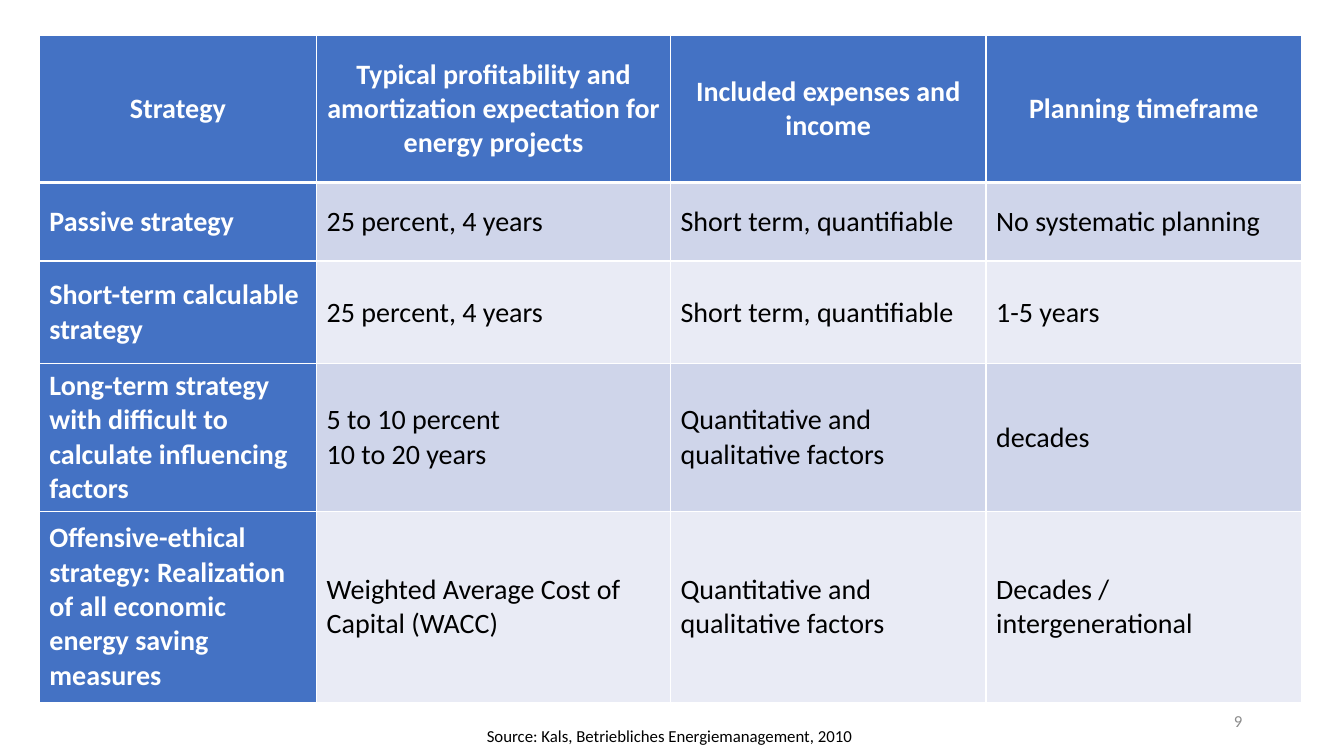
from dataclasses import dataclass

from lxml.etree import SubElement
from pptx import Presentation
from pptx.dml.color import RGBColor
from pptx.enum.text import MSO_ANCHOR, PP_ALIGN
from pptx.oxml.ns import qn
from pptx.util import Inches, Pt


@dataclass(frozen=True)
class Theme:
    font: str = "Calibri"
    head: str = "4472C4"
    bands: tuple = ("CFD5EA", "E9EBF5")
    light: str = "FFFFFF"
    dark: str = "000000"
    muted: str = "8C8C8C"
    cell: int = 20
    small: int = 12
    thin: int = 1
    thick: int = 3


HEADS = ["Strategy",
         "Typical profitability and amortization expectation for energy projects",
         "Included expenses and income",
         "Planning timeframe"]
PLANS = [
    ["Passive strategy", "25 percent, 4 years",
     "Short term, quantifiable", "No systematic planning"],
    ["Short-term calculable strategy", "25 percent, 4 years",
     "Short term, quantifiable", "1-5 years"],
    ["Long-term strategy with difficult to calculate influencing factors",
     "5 to 10 percent\n10 to 20 years",
     "Quantitative and qualitative factors", "decades"],
    ["Offensive-ethical strategy: Realization of all economic energy saving measures",
     "Weighted Average Cost of Capital (WACC)",
     "Quantitative and qualitative factors", "Decades / intergenerational"],
]
WIDTHS = [2.75, 3.51, 3.13, 3.13]
HEIGHTS = [1.46, 0.78, 1.02, 1.46, 1.9]


class Board:
    def __init__(self, slide, theme):
        self.slide = slide
        self.theme = theme

    def style(self, frame, size, color, bold=False, align=PP_ALIGN.LEFT):
        for para in frame.paragraphs:
            para.alignment = align
            for run in para.runs:
                run.font.name = self.theme.font
                run.font.size = Pt(size)
                run.font.bold = bold
                run.font.color.rgb = RGBColor.from_string(color)

    def edges(self, cell, row):
        """Draw the cell borders, thick between the header and the body."""
        props = cell._tc.get_or_add_tcPr()
        for side in "LRTB":
            bold = (row, side) in ((0, "B"), (1, "T"))
            width = self.theme.thick if bold else self.theme.thin
            line = SubElement(props, qn(f"a:ln{side}"), w=str(Pt(width)))
            fill = SubElement(line, qn("a:solidFill"))
            SubElement(fill, qn("a:srgbClr"), val=self.theme.light)

    def table(self, left, top, rows, widths, heights):
        theme = self.theme
        grid = self.slide.shapes.add_table(
            len(rows), len(widths), Inches(left), Inches(top),
            Inches(sum(widths)), Inches(sum(heights))).table
        grid.first_col = True
        for col, width in zip(grid.columns, widths):
            col.width = Inches(width)
        for i, (texts, height) in enumerate(zip(rows, heights)):
            grid.rows[i].height = Inches(height)
            for j, text in enumerate(texts):
                cell = grid.cell(i, j)
                label = i == 0 or j == 0
                color = theme.head if label else theme.bands[(i - 1) % 2]
                self.edges(cell, i)
                cell.fill.solid()
                cell.fill.fore_color.rgb = RGBColor.from_string(color)
                cell.vertical_anchor = MSO_ANCHOR.MIDDLE
                cell.text_frame.text = text
                self.style(cell.text_frame, theme.cell,
                           theme.light if label else theme.dark, label,
                           PP_ALIGN.LEFT if i else PP_ALIGN.CENTER)

    def note(self, text, box, color, align=PP_ALIGN.LEFT,
             anchor=MSO_ANCHOR.TOP, wrap=True):
        frame = self.slide.shapes.add_textbox(*map(Inches, box)).text_frame
        frame.text = text
        frame.word_wrap = wrap
        frame.vertical_anchor = anchor
        self.style(frame, self.theme.small, color, align=align)


def main():
    deck = Presentation()
    deck.slide_width, deck.slide_height = Inches(13.33), Inches(7.5)
    theme = Theme()
    blank = deck.slide_layouts[6]
    board = Board(deck.slides.add_slide(blank), theme)
    board.table(0.39, 0.35, [HEADS] + PLANS, WIDTHS, HEIGHTS)
    board.note("9", (9.42, 6.95, 3, 0.4), theme.muted,
               PP_ALIGN.RIGHT, MSO_ANCHOR.MIDDLE)
    board.note("Source: Kals, Betriebliches Energiemanagement, 2010",
               (4.73, 7.15, 3.87, 0.3), theme.dark, wrap=False)
    deck.save("out.pptx")


if __name__ == "__main__":
    main()
